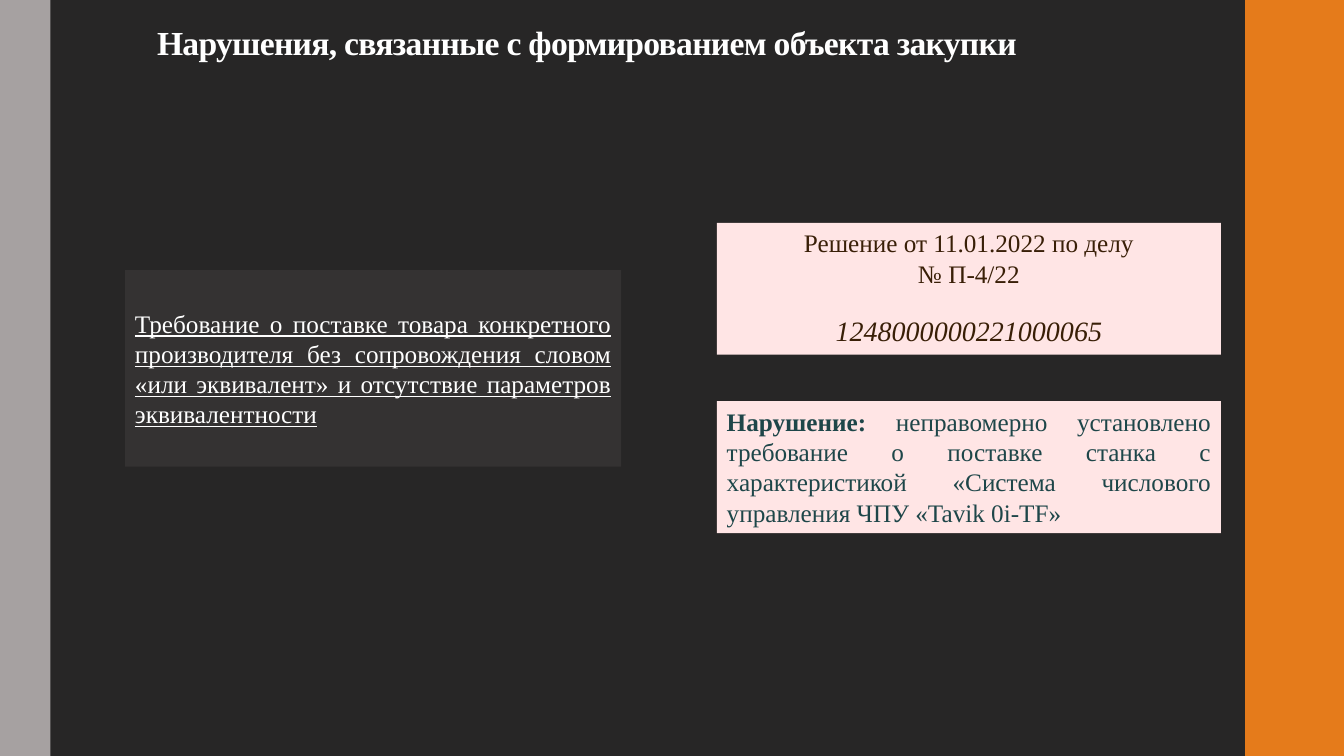
from pptx import Presentation
from pptx.dml.color import RGBColor
from pptx.enum.shapes import MSO_SHAPE as Shape
from pptx.enum.text import MSO_ANCHOR as Anchor, PP_ALIGN as Align
from pptx.util import Inches, Pt

WIDTH, HEIGHT = 13.33, 7.5
FONT = "Times New Roman"
BACKGROUND, PINK = "272626", "FFE5E5"
WHITE, BROWN, TEAL = "FFFFFF", "391F07", "1E4649"

TITLE = "Нарушения, связанные с формированием объекта закупки"
REQUIREMENT = ("Требование о поставке товара конкретного производителя "
               "без сопровождения словом «или эквивалент» "
               "и отсутствие параметров эквивалентности")
DECISION = ("Решение от 11.01.2022 по делу", "№ П-4/22")
PURCHASE_NUMBER = "1248000000221000065"
VIOLATION_LABEL = "Нарушение: "
VIOLATION = ("неправомерно установлено требование о поставке станка "
             "с характеристикой «Система числового управления ЧПУ «Tavik 0i-TF»")

BANDS = [(0, 0.5, "A6A1A1"), (12.35, WIDTH - 12.35, "E57B1B")]
CARD_LEFT, CARD_TOP, CARD_WIDTH, CARD_HEIGHT, CARD_STEP = 7.11, 2.21, 5, 1.31, 1.77


def color(hex_value):
    """Turn a hex string into a colour."""
    return RGBColor.from_string(hex_value)


def add_panel(slide, left, top, width, height, fill, anchor=Anchor.TOP):
    """Add a flat rectangle and return its text frame."""
    panel = slide.shapes.add_shape(
        Shape.RECTANGLE, Inches(left), Inches(top), Inches(width), Inches(height))
    panel.shadow.inherit = False
    panel.fill.solid()
    panel.fill.fore_color.rgb = color(fill)
    panel.line.fill.background()
    frame = panel.text_frame
    frame.word_wrap = True
    frame.vertical_anchor = anchor
    return frame


def add_run(paragraph, text, size, ink, bold=False, italic=False, underline=False):
    """Add one styled run to a paragraph."""
    run = paragraph.add_run()
    run.text = text
    font = run.font
    font.name, font.size = FONT, Pt(size)
    font.bold, font.italic, font.underline = bold, italic, underline
    font.color.rgb = color(ink)
    return run


def add_title(slide):
    """Add the heading with slightly tightened letters."""
    box = slide.shapes.add_textbox(Inches(1.46), Inches(0.23), Inches(10.5), Inches(0.5))
    frame = box.text_frame
    frame.word_wrap = True
    frame.margin_top = Inches(0.03)
    heading = frame.paragraphs[0]
    heading.line_spacing = 0.9
    run = add_run(heading, TITLE, 24, WHITE, bold=True)
    run.font._element.set("spc", "-50")


def main():
    """Build the slide and save it."""
    deck = Presentation()
    deck.slide_width, deck.slide_height = Inches(WIDTH), Inches(HEIGHT)
    slide = deck.slides.add_slide(deck.slide_layouts[6])
    slide.background.fill.solid()
    slide.background.fill.fore_color.rgb = color(BACKGROUND)

    for left, width, fill in BANDS:
        add_panel(slide, left, 0, width, HEIGHT, fill)
    add_title(slide)

    requirement = add_panel(slide, 1.24, 2.68, 4.92, 1.95, "343232", Anchor.MIDDLE).paragraphs[0]
    requirement.alignment = Align.JUSTIFY
    add_run(requirement, REQUIREMENT, 18, WHITE, underline=True)

    decision_card, violation_card = [
        add_panel(slide, CARD_LEFT, CARD_TOP + row * CARD_STEP, CARD_WIDTH, CARD_HEIGHT, PINK)
        for row in range(2)]

    decision = decision_card.paragraphs[0]
    decision.alignment = Align.CENTER
    add_run(decision, DECISION[0], 18, BROWN)
    decision.add_line_break()
    add_run(decision, DECISION[1], 18, BROWN)
    number = decision_card.add_paragraph()
    number.alignment = Align.CENTER
    number.space_before = Pt(18)
    add_run(number, PURCHASE_NUMBER, 20, BROWN, italic=True)

    violation = violation_card.paragraphs[0]
    violation.alignment = Align.JUSTIFY
    add_run(violation, VIOLATION_LABEL, 18, TEAL, bold=True)
    add_run(violation, VIOLATION, 18, TEAL)

    deck.save("out.pptx")


if __name__ == "__main__":
    main()
